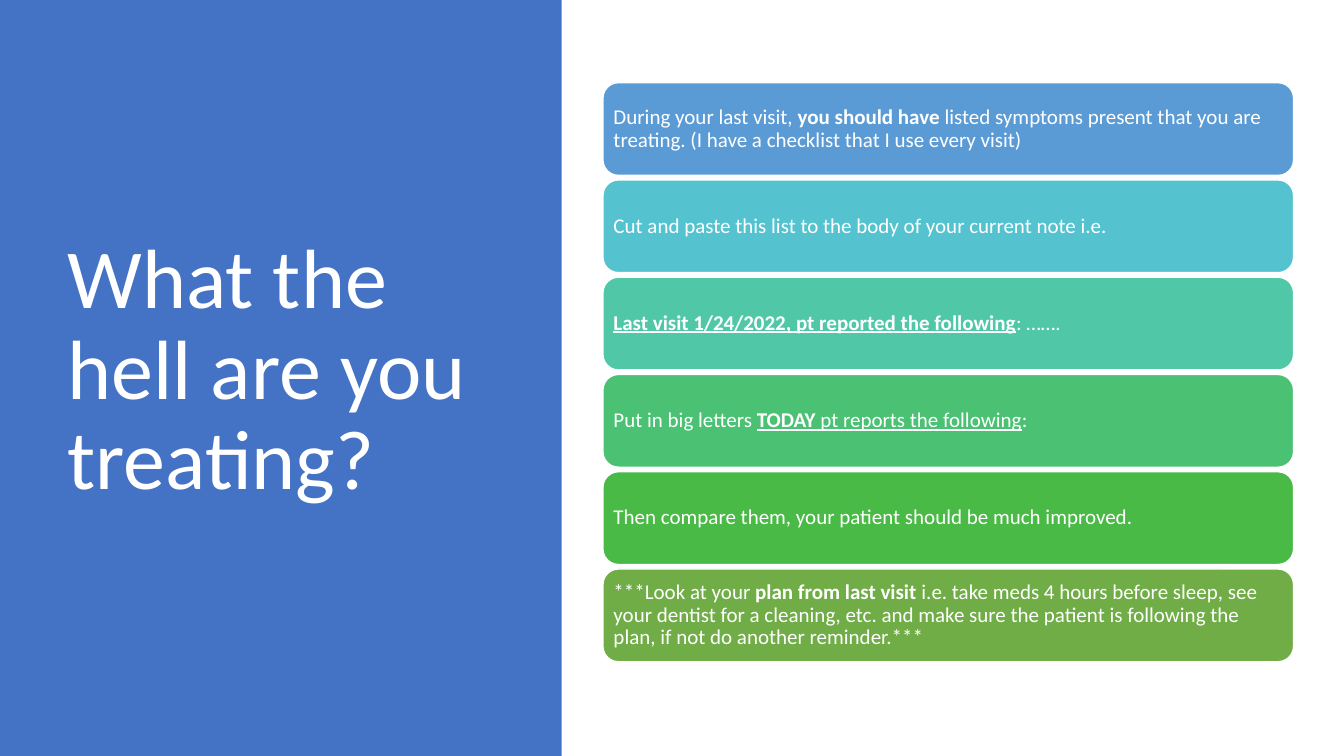
from pptx import Presentation
from pptx.dml.color import RGBColor
from pptx.enum.shapes import MSO_SHAPE
from pptx.enum.text import MSO_ANCHOR, MSO_AUTO_SIZE, PP_ALIGN
from pptx.util import Inches, Pt

RECTANGLE = MSO_SHAPE.RECTANGLE
ROUNDED = MSO_SHAPE.ROUNDED_RECTANGLE
MIDDLE = MSO_ANCHOR.MIDDLE
NO_AUTOFIT = MSO_AUTO_SIZE.NONE
LEFT = PP_ALIGN.LEFT

FONT = "Calibri"
COLORS = {
    "white": "FFFFFF",
    "panel": "4472C4",
    "blue": "5B9BD5",
    "cyan": "55C3CF",
    "teal": "50C8A7",
    "mint": "4BC174",
    "green": "4ABA46",
    "olive": "70AD47",
}
TITLE = "What the hell are you treating?"
STEPS = [
    ("blue", [
        ("During your last visit, ", {}),
        ("you should have ", {"bold": True}),
        ("listed symptoms present that you are treating. "
         "(I have a checklist that I use every visit)", {}),
    ]),
    ("cyan", [
        ("Cut and paste this list to the body of your current note i.e.", {}),
    ]),
    ("teal", [
        ("Last visit 1/24/2022, pt reported the following",
         {"bold": True, "underline": True}),
        (": …….", {}),
    ]),
    ("mint", [
        ("Put in big letters ", {}),
        ("TODAY ", {"bold": True, "underline": True}),
        ("pt reports the following", {"underline": True}),
        (":", {}),
    ]),
    ("green", [
        ("Then compare them, your patient should be much improved.", {}),
    ]),
    ("olive", [
        ("***Look at your ", {}),
        ("plan from last visit ", {"bold": True}),
        ("i.e. take meds 4 hours before sleep, see your dentist for a cleaning, "
         "etc. and make sure the patient is following the plan, "
         "if not do another reminder.***", {}),
    ]),
]
STEP_TOP = 0.82
STEP_PITCH = 0.965


def color(name):
    return RGBColor.from_string(COLORS[name])


def add_text(paragraph, text, size=15, bold=False, underline=False):
    run = paragraph.add_run()
    run.text = text
    font = run.font
    font.name = FONT
    font.size = Pt(size)
    font.bold = bold
    font.underline = underline
    font.color.rgb = color("white")


def prepare_frame(shape, inset):
    frame = shape.text_frame
    frame.word_wrap = True
    frame.auto_size = NO_AUTOFIT
    frame.vertical_anchor = MIDDLE
    frame.margin_left = frame.margin_right = Inches(inset)
    frame.margin_top = frame.margin_bottom = Inches(inset)
    paragraph = frame.paragraphs[0]
    paragraph.alignment = LEFT
    paragraph.line_spacing = 0.9
    return paragraph


def add_box(slide, kind, left, top, width, height, fill):
    shape = slide.shapes.add_shape(
        kind, Inches(left), Inches(top), Inches(width), Inches(height))
    shape.shadow.inherit = False
    shape.fill.solid()
    shape.fill.fore_color.rgb = color(fill)
    return shape


def add_panel(slide):
    panel = add_box(slide, RECTANGLE, 0, 0, 5.57, 7.5, "panel")
    panel.line.fill.background()
    slide.shapes.title._element.addprevious(panel._element)


def format_title(slide):
    title = slide.shapes.title
    title.left, title.top = Inches(0.57), Inches(0.68)
    title.width, title.height = Inches(4.16), Inches(6.02)
    add_text(prepare_frame(title, 0.1), TITLE, size=60)


def add_step(slide, top, fill, runs):
    box = add_box(slide, ROUNDED, 5.98, top, 6.85, 0.92, fill)
    box.line.color.rgb = color("white")
    box.line.width = Pt(1)
    paragraph = prepare_frame(box, 0.06)
    paragraph.space_after = Pt(5.25)
    for text, style in runs:
        add_text(paragraph, text, **style)


def main():
    presentation = Presentation()
    presentation.slide_width = Inches(13.33)
    presentation.slide_height = Inches(7.5)
    slide = presentation.slides.add_slide(presentation.slide_layouts[5])
    add_panel(slide)
    format_title(slide)
    for index, (fill, runs) in enumerate(STEPS):
        add_step(slide, STEP_TOP + index * STEP_PITCH, fill, runs)
    presentation.save("out.pptx")


if __name__ == "__main__":
    main()
